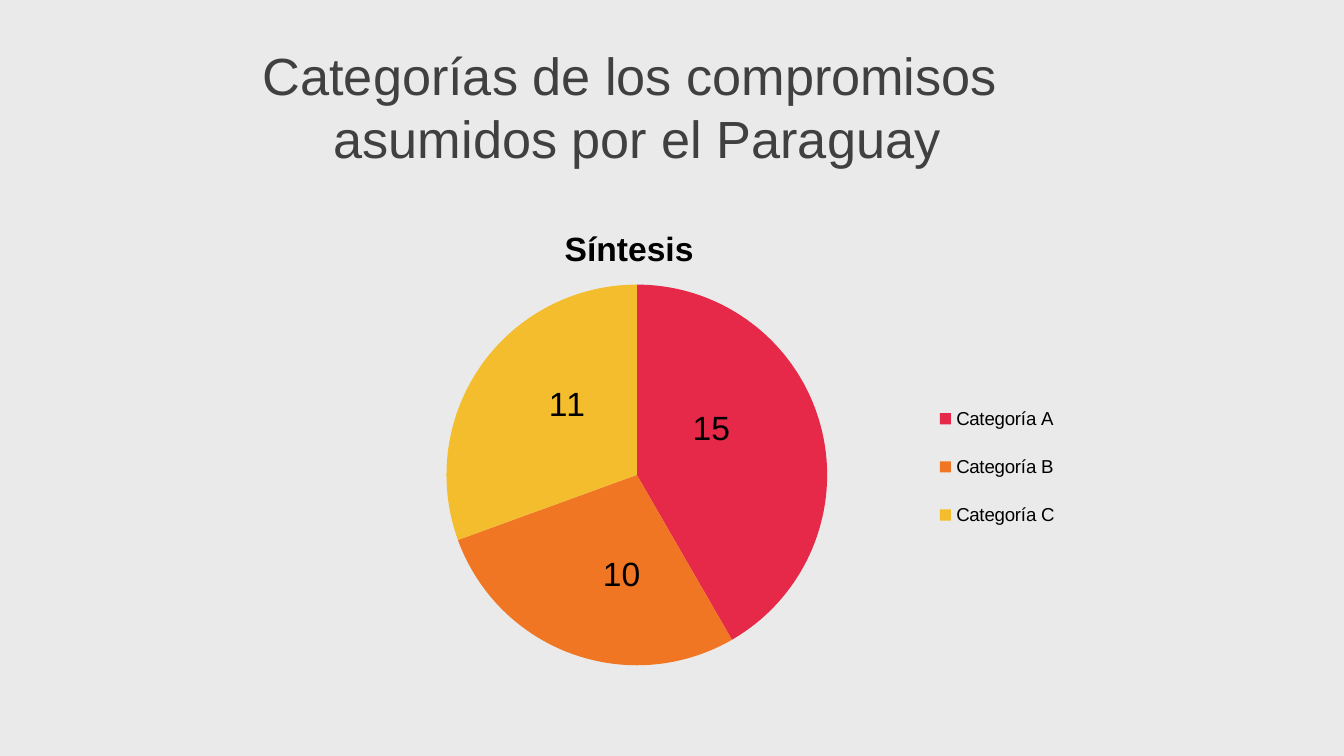
from lxml import etree
from pptx import Presentation
from pptx.chart.data import CategoryChartData
from pptx.dml.color import RGBColor
from pptx.enum.chart import XL_CHART_TYPE, XL_LABEL_POSITION, XL_LEGEND_POSITION
from pptx.enum.text import MSO_ANCHOR, PP_ALIGN
from pptx.oxml.ns import qn
from pptx.util import Inches, Pt

PIE = XL_CHART_TYPE.PIE
LABEL_CENTER = XL_LABEL_POSITION.CENTER
LEGEND_RIGHT = XL_LEGEND_POSITION.RIGHT
MIDDLE = MSO_ANCHOR.MIDDLE
CENTER = PP_ALIGN.CENTER

FONT = "Arial"
COLORS = {
    "background": "EAEAEA",
    "heading": "404040",
    "text": "000000",
    "Categoría A": "E62949",
    "Categoría B": "F07624",
    "Categoría C": "F4BD2D",
}
# Commitments per category, and the shift of each value from its slice's centre
COMMITMENTS = {"Categoría A": 15, "Categoría B": 10, "Categoría C": 11}
VALUE_SHIFTS = {
    "Categoría A": (-0.02, -0.04),
    "Categoría B": (0.02, 0.02),
    "Categoría C": (0.01, -0.03),
}
EDGE = {"xMode": "edge", "yMode": "edge"}


def style_font(font, size, color, bold=False):
    for name, value in {"name": FONT, "size": Pt(size), "bold": bold}.items():
        setattr(font, name, value)
    font.color.rgb = RGBColor.from_string(COLORS[color])


def paint(fill, color):
    fill.solid()
    fill.fore_color.rgb = RGBColor.from_string(COLORS[color])


def place(element, index, **settings):
    """Lay out a chart part by fractions of the chart's size."""
    for old in element.findall(qn("c:layout")):
        element.remove(old)
    layout = etree.Element(qn("c:layout"))
    manual = etree.SubElement(layout, qn("c:manualLayout"))
    for tag, value in settings.items():
        etree.SubElement(manual, qn(f"c:{tag}")).set("val", str(value))
    element.insert(index, layout)


def add_heading(slide, text):
    box = slide.shapes.add_textbox(Inches(0.59), Inches(0.37), Inches(8.19), Inches(0.84))
    frame = box.text_frame
    frame.word_wrap = False
    frame.vertical_anchor = MIDDLE
    paragraph = frame.paragraphs[0]
    paragraph.text = text
    paragraph.alignment = CENTER
    for run in paragraph.runs:
        style_font(run.font, 28, "heading")


def style_slices(series):
    labels = series.data_labels
    labels.show_value = True
    labels.position = LABEL_CENTER
    style_font(labels.font, 18, "text")
    for index, category in enumerate(COMMITMENTS):
        point = series.points[index]
        paint(point.format.fill, category)
        point.data_label.position = LABEL_CENTER
        style_font(point.data_label.font, 18, "text")
    for label, (x, y) in zip(series.data_labels._element.findall(qn("c:dLbl")),
                             VALUE_SHIFTS.values()):
        place(label, 1, x=x, y=y)


def add_summary_pie(slide):
    data = CategoryChartData()
    data.categories = list(COMMITMENTS)
    data.add_series("Series 1", list(COMMITMENTS.values()))
    chart = slide.shapes.add_chart(
        PIE, Inches(2.09), Inches(1.4), Inches(6.46), Inches(3.99), data
    ).chart
    style_font(chart.font, 10, "text")
    chart_xml = chart.element.find(qn("c:chart"))

    # Title
    title = chart.chart_title
    title.text_frame.text = "Síntesis"
    style_font(title.text_frame.paragraphs[0].runs[0].font, 18, "text", bold=True)
    title.include_in_layout = False
    place(chart_xml.find(qn("c:title")), 1, **EDGE, x=0.32, y=0.06)

    # Slices and their values
    pie = chart.plots[0]
    pie.vary_by_categories = True
    style_slices(pie.series[0])
    place(chart_xml.find(qn("c:plotArea")), 0, layoutTarget="inner", **EDGE,
          x=0.19, y=0.18, w=0.44, h=0.71)

    # Legend
    chart.has_legend = True
    legend = chart.legend
    legend.position = LEGEND_RIGHT
    legend.include_in_layout = False
    style_font(legend.font, 10, "text")
    place(chart_xml.find(qn("c:legend")), 1, **EDGE, x=0.75, y=0.36, w=0.15, h=0.32)


def main():
    deck = Presentation()
    deck.slide_width = Inches(10)
    deck.slide_height = deck.slide_width * 9 // 16
    slide = deck.slides.add_slide(deck.slide_layouts[6])
    paint(slide.background.fill, "background")

    add_heading(slide, "Categorías de los compromisos\v asumidos por el Paraguay")
    add_summary_pie(slide)
    deck.save("out.pptx")


if __name__ == "__main__":
    main()
